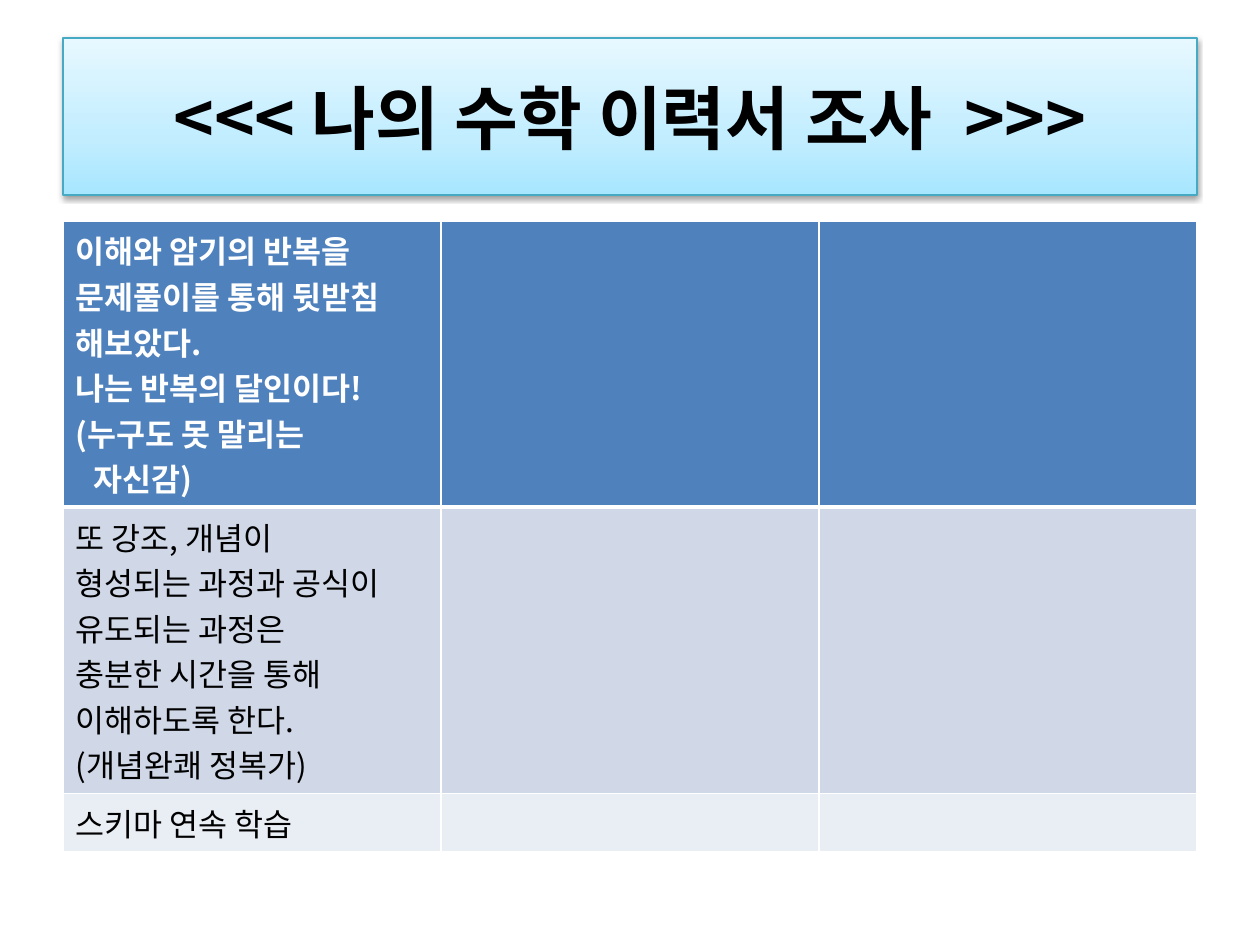
"""Builds a slide with a gradient title banner and a three-column survey table."""
from copy import deepcopy
from pptx import Presentation
from pptx.dml.color import RGBColor
from pptx.enum.shapes import MSO_SHAPE
from pptx.enum.text import MSO_ANCHOR, PP_ALIGN
from pptx.oxml import parse_xml
from pptx.oxml.ns import nsdecls, qn
from pptx.util import Pt

SCALE = 914400 // 126
FONT = "Noto Sans CJK KR"
WHITE = RGBColor(0xFF, 0xFF, 0xFF)
BLACK = RGBColor(0, 0, 0)
BLUE = RGBColor(0x4F, 0x81, 0xBD)
MIST = RGBColor(0xD0, 0xD8, 0xE8)
PALE = RGBColor(0xE9, 0xED, 0xF4)
TEAL = RGBColor(0x46, 0xAA, 0xC5)
SKY = [(0, RGBColor(0xA7, 0xE6, 0xFF)), (0.35, RGBColor(0xC1, 0xED, 0xFF)),
       (1, RGBColor(0xE7, 0xF8, 0xFF))]
TITLE = {"size": Pt(39.6), "bold": True}
HEAD = {"size": Pt(18), "bold": True}
BODY = {"size": Pt(18), "bold": False}
INDENT = 18

ROWS = [
    (["이해와 암기의 반복을", "문제풀이를 통해 뒷받침 해보았다.", "나는 반복의 달인이다!",
      "(누구도 못 말리는", "\t자신감)"], BLUE, WHITE, HEAD),
    (["또 강조, 개념이", "형성되는 과정과 공식이 유도되는 과정은", "충분한 시간을 통해",
      "이해하도록 한다.", "(개념완쾌 정복가)"], MIST, BLACK, BODY),
    (["스키마 연속 학습"], PALE, BLACK, BODY),
]


def px(n):
    return n * SCALE


class Deck:
    """Holds the font and the current slide."""

    def __init__(self, show, font):
        self.font = font
        self.slide = show.slides.add_slide(show.slide_layouts[6])

    def text(self, frame, lines, color, style, align=PP_ALIGN.LEFT):
        for i, line in enumerate(lines):
            para = frame.add_paragraph() if i else frame.paragraphs[0]
            para.alignment = align
            if line.startswith("\t"):
                para._p.get_or_add_pPr().set("marL", str(px(INDENT)))
            run = para.add_run()
            run.text = line.lstrip("\t")
            run.font.name = self.font
            run.font.color.rgb = color
            for key, value in style.items():
                setattr(run.font, key, value)
            run._r.rPr.find(qn("a:latin")).addnext(
                parse_xml(f'<a:ea {nsdecls("a")} typeface="{self.font}"/>'))

    def banner(self, box, line, stops):
        shape = self.slide.shapes.add_shape(MSO_SHAPE.RECTANGLE, *map(px, box))
        shape.fill.gradient()
        shape.fill.gradient_angle = 90
        last = shape._element.spPr.findall(".//" + qn("a:gs"))[-1]
        last.addnext(deepcopy(last))
        for stop, (place, color) in zip(shape.fill.gradient_stops, stops):
            stop.position = place
            stop.color.rgb = color
        shape.line.color.rgb = TEAL
        shape.line.width = Pt(0.75)
        shape.shadow.inherit = False
        shape._element.spPr.find(qn("a:effectLst")).append(parse_xml(
            f'<a:outerShdw {nsdecls("a")} blurRad="{Pt(3.1)}" dist="{Pt(1.6)}" '
            'dir="5400000" rotWithShape="0"><a:srgbClr val="000000">'
            '<a:alpha val="38000"/></a:srgbClr></a:outerShdw>'))
        frame = shape.text_frame
        frame.word_wrap = True
        frame.vertical_anchor = MSO_ANCHOR.MIDDLE
        self.text(frame, [line], BLACK, TITLE, PP_ALIGN.CENTER)

    def edge(self, cell, side, width):
        cell._tc.get_or_add_tcPr().append(parse_xml(
            f'<a:ln{side} {nsdecls("a")} w="{Pt(width)}"><a:solidFill>'
            f'<a:srgbClr val="{WHITE}"/></a:solidFill></a:ln{side}>'))

    def table(self, box, rows, cols, tall):
        item = self.slide.shapes.add_table(len(rows), cols, *map(px, box))
        grid = item.table
        for r, (lines, fill, color, style) in enumerate(rows):
            grid.rows[r].height = px(tall)
            thick = {"T": 3 if r == 1 else 1, "B": 3 if r == 0 else 1}
            for cell in grid.rows[r].cells:
                for side in "LRTB":
                    self.edge(cell, side, thick.get(side, 1))
                cell.fill.solid()
                cell.fill.fore_color.rgb = fill
            self.text(grid.cell(r, 0).text_frame, lines, color, style)
        item.height = px(box[3])


def main():
    show = Presentation()
    show.slide_width, show.slide_height = px(1260), px(945)
    deck = Deck(show, FONT)
    deck.banner((63, 38, 1134, 157), "<<< 나의 수학 이력서 조사  >>>", SKY)
    deck.table((63, 221, 1134, 530), ROWS, 3, 52)
    show.save("out.pptx")


if __name__ == "__main__":
    main()
